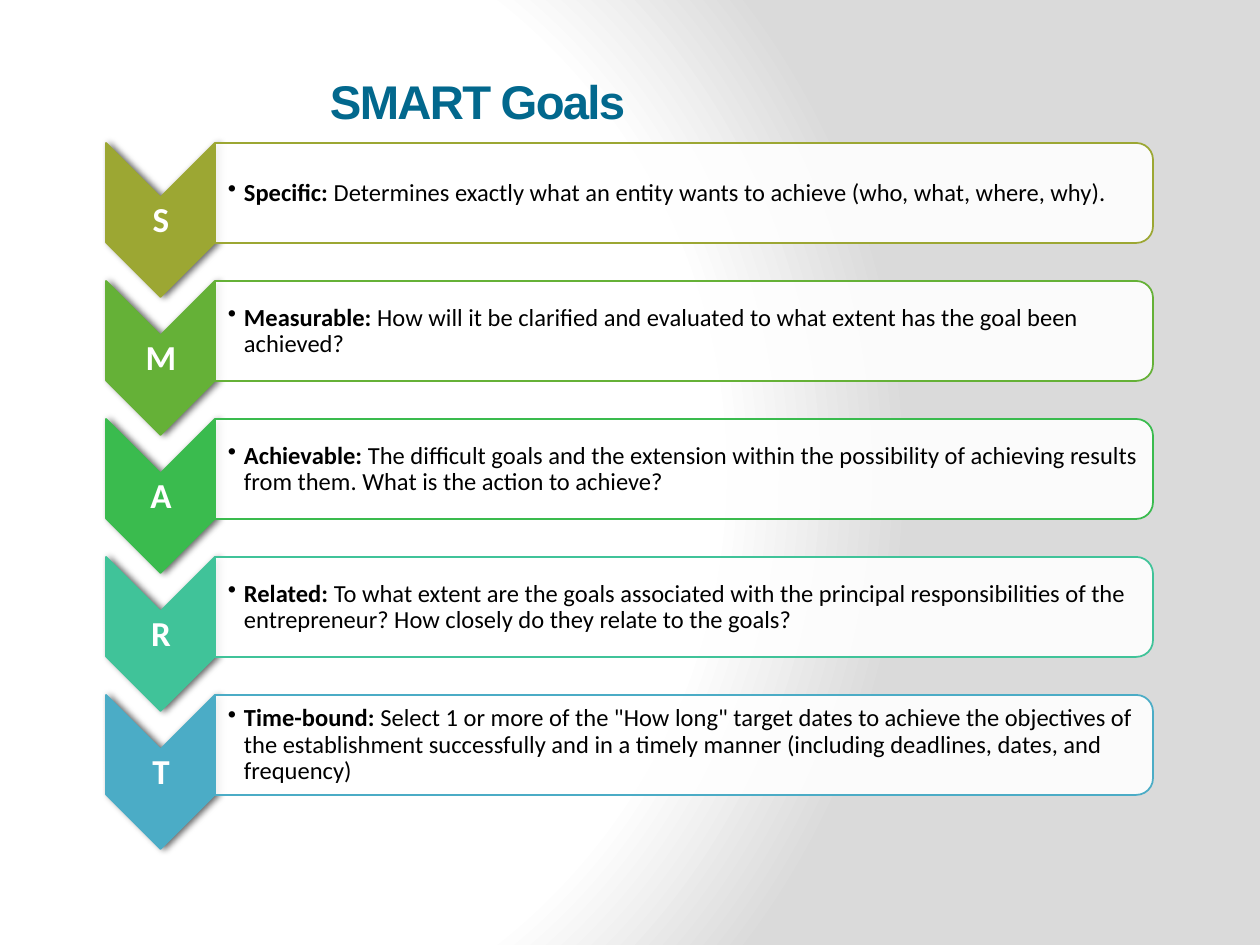
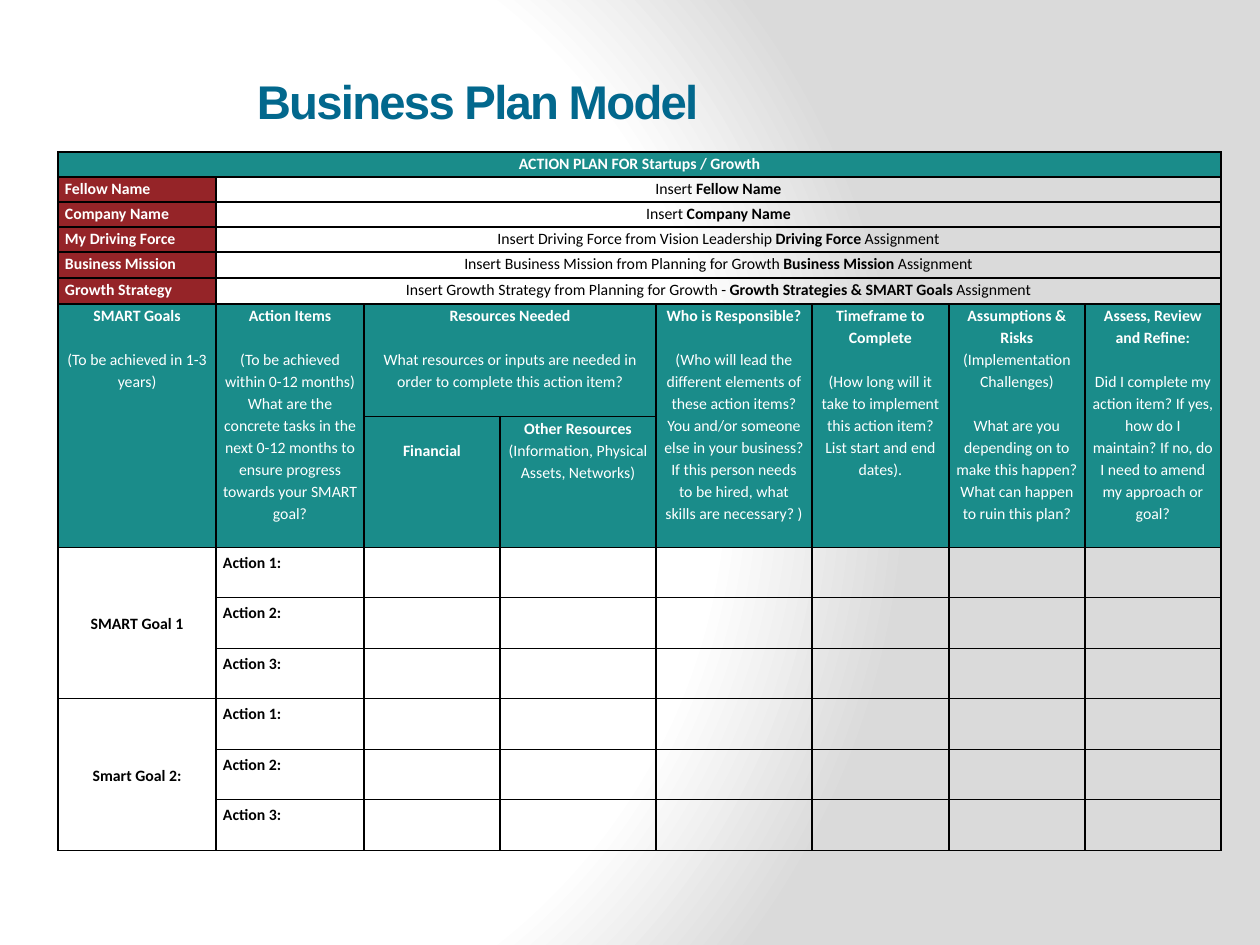
from lxml import etree
from pptx import Presentation
from pptx.dml.color import RGBColor
from pptx.enum.shapes import MSO_SHAPE
from pptx.enum.text import MSO_ANCHOR, MSO_AUTO_SIZE, PP_ALIGN
from pptx.oxml import parse_xml
from pptx.oxml.ns import nsdecls, qn
from pptx.util import Emu, Pt

PX = 914400 / 126
TITLE_ONLY = 5
CHEVRON = MSO_SHAPE.CHEVRON
ROUND_TOP = MSO_SHAPE.ROUND_2_SAME_RECTANGLE
LEFT, CENTER = PP_ALIGN.LEFT, PP_ALIGN.CENTER
TOP, MIDDLE = MSO_ANCHOR.TOP, MSO_ANCHOR.MIDDLE

COLORS = {
    "title": "02688D", "white": "FFFFFF", "black": "000000", "backdrop": "DADADA",
    "header": "1A8C8A", "label": "952428",
    "S": "9CA733", "M": "65B137", "A": "3ABB4E", "R": "40C399", "T": "4BACC6",
}

# Text between asterisks is bold.
GOALS = {
    "S": "*Specific:* Determines exactly what an entity wants to achieve (who, what, where, why).",
    "M": "*Measurable:* How will it be clarified and evaluated to what extent has the goal been achieved?",
    "A": "*Achievable:* The difficult goals and the extension within the possibility of achieving "
         "results from them. What is the action to achieve?",
    "R": "*Related:* To what extent are the goals associated with the principal responsibilities "
         "of the entrepreneur? How closely do they relate to the goals?",
    "T": "*Time-bound:* Select 1 or more of the \"How long\" target dates to achieve the objectives "
         "of the establishment successfully and in a timely manner (including deadlines, dates, "
         "and frequency)",
}

PLAN_COLUMNS = [158, 148, 136, 156, 156, 137, 136, 136]
PLAN_ROWS = [25] * 4 + [26] * 2 + [113, 131] + [50, 51] * 3
PROFILE = [
    ("Fellow Name", "Insert *Fellow Name*"),
    ("Company Name", "Insert *Company Name*"),
    ("My Driving Force", "Insert Driving Force from Vision Leadership *Driving Force* Assignment"),
    ("Business Mission",
     "Insert Business Mission from Planning for Growth *Business Mission* Assignment"),
    ("Growth Strategy",
     "Insert Growth Strategy from Planning for Growth - "
     "*Growth Strategies & SMART Goals* Assignment"),
]
# (row, column, rows spanned, columns spanned, paragraph groups set apart by a gap)
HEADINGS = [
    (6, 0, 2, 1, [["*SMART Goals*"], ["(To be achieved in 1-3 years)"]]),
    (6, 1, 2, 1, [["*Action Items*"],
                  ["(To be achieved within 0-12 months)",
                   "What are the concrete tasks in the next 0-12 months to ensure progress "
                   "towards your SMART goal?"]]),
    (6, 2, 1, 2, [["*Resources Needed*"],
                  ["What resources or inputs are needed in order to complete this action item?"]]),
    (6, 4, 2, 1, [["*Who is Responsible?*"],
                  ["(Who will lead the different elements of these action items? You and/or "
                   "someone else in your business? If this person needs to be hired, what "
                   "skills are necessary? )"]]),
    (6, 5, 2, 1, [["*Timeframe to Complete*"],
                  ["(How long will it take to implement this action item? List start and "
                   "end dates)."]]),
    (6, 6, 2, 1, [["*Assumptions & Risks*", "(Implementation Challenges)"],
                  ["What are you depending on to make this happen?",
                   "What can happen to ruin this plan?"]]),
    (6, 7, 2, 1, [["*Assess, Review and Refine:*"],
                  ["Did I complete my action item? If yes, how do I maintain? If no, do I need "
                   "to amend my approach or goal?"]]),
    (7, 3, 1, 1, [["*Other Resources*", "(Information, Physical Assets, Networks)"]]),
]


def px(*lengths):
    return [Emu(round(length * PX)) for length in lengths]


def rgb(name):
    return RGBColor.from_string(COLORS[name])


def assign(target, **values):
    for name, value in values.items():
        setattr(target, name, value)


def write_runs(paragraph, marked, size, color, font="Calibri"):
    """Add the text as runs, bold between asterisks."""
    for index, part in enumerate(marked.split("*")):
        if part:
            run = paragraph.add_run()
            run.text = part
            assign(run.font, name=font, size=Pt(size), bold=index % 2 == 1)
            run.font.color.rgb = rgb(color)


def set_backdrop(master):
    fill = master.background.fill
    fill.solid()
    background = master.element.find(".//" + qn("p:bgPr"))
    stops = "".join(
        f'<a:gs pos="{position}000"><a:srgbClr val="{COLORS[name]}"/></a:gs>'
        for position, name in ((0, "white"), (75, "white"), (100, "backdrop")))
    background.replace(background[0], parse_xml(
        f'<a:gradFill {nsdecls("a")} rotWithShape="1"><a:gsLst>{stops}</a:gsLst>'
        '<a:path path="circle"><a:fillToRect l="20000" t="50000" r="100000" b="50000"/>'
        '</a:path></a:gradFill>'))


def new_slide(prs, heading):
    slide = prs.slides.add_slide(prs.slide_layouts[TITLE_ONLY])
    title = slide.shapes.title
    left, top, width, height = px(0, 25, 955, 151)
    assign(title, left=left, top=top, width=width, height=height)
    assign(title.text_frame, vertical_anchor=MIDDLE, word_wrap=True,
           auto_size=MSO_AUTO_SIZE.NONE)
    paragraph = title.text_frame.paragraphs[0]
    paragraph.alignment = CENTER
    write_runs(paragraph, f"*{heading}*", 27, "title", "Arial")
    paragraph.runs[0].font._element.set("spc", "-100")
    return slide


def add_turned(slide, preset, x, y, width, height, fill, line):
    """Add a shape turned by 90 degrees that covers the given box."""
    shift = (width - height) / 2
    shape = slide.shapes.add_shape(preset, *px(x + shift, y - shift, height, width))
    shape.rotation = 90
    shape.shadow.inherit = False
    shape.fill.solid()
    shape.fill.fore_color.rgb = rgb(fill)
    shape.line.color.rgb = rgb(line)
    shape.line.width = Pt(1)
    return shape


def add_caption(slide, box, inset):
    frame = slide.shapes.add_textbox(*px(*box)).text_frame
    edge, = px(1)
    assign(frame, word_wrap=True, vertical_anchor=MIDDLE, margin_left=px(inset)[0],
           margin_right=edge, margin_top=edge, margin_bottom=edge)
    return frame.paragraphs[0]


def add_goal(slide, x, y, letter, meaning):
    """Draw a chevron with its letter and the bar that explains it."""
    chevron = add_turned(slide, CHEVRON, x, y, 109, 154, letter, letter)
    chevron.element.spPr.find(qn("a:effectLst")).append(parse_xml(
        f'<a:outerShdw {nsdecls("a")} blurRad="50800" dist="25400" dir="0" rotWithShape="0">'
        f'<a:srgbClr val="{COLORS["black"]}"><a:alpha val="60000"/></a:srgbClr></a:outerShdw>'))
    initial = add_caption(slide, (x + 1, y + 55, 108, 46), 1)
    assign(initial, alignment=CENTER, line_spacing=0.9)
    write_runs(initial, f"*{letter}*", 20, "white")

    bar = add_turned(slide, ROUND_TOP, x + 109, y, 938, 100, "white", letter)
    white = bar.element.spPr.find(qn("a:solidFill"))[0]
    etree.SubElement(white, qn("a:alpha")).set("val", "90000")
    explanation = add_caption(slide, (x + 108, y + 5, 934, 91), 14)
    properties = explanation._p.get_or_add_pPr()
    indent, = px(16)
    properties.set("marL", str(indent))
    properties.set("indent", str(-indent))
    etree.SubElement(properties, qn("a:buChar")).set("char", "•")
    explanation.line_spacing = 0.9
    write_runs(explanation, meaning, 14, "black")


def add_borders(cell):
    properties = cell._tc.get_or_add_tcPr()
    for side in "LRTB":
        properties.append(parse_xml(
            f'<a:ln{side} {nsdecls("a")} w="12700"><a:solidFill>'
            f'<a:srgbClr val="{COLORS["black"]}"/></a:solidFill></a:ln{side}>'))


def fill_cell(cell, groups, fill=None, align=CENTER, anchor=TOP, top=0):
    """Write groups of paragraphs, one empty line's height apart."""
    if fill:
        cell.fill.solid()
        cell.fill.fore_color.rgb = rgb(fill)
    cell.margin_top = px(top)[0]
    cell.vertical_anchor = anchor
    paragraph = None
    for group in groups:
        for index, marked in enumerate(group):
            is_first = paragraph is None
            paragraph = cell.text_frame.paragraphs[0] if is_first else cell.text_frame.add_paragraph()
            assign(paragraph, alignment=align, line_spacing=1.15)
            if index == 0 and not is_first:
                paragraph.space_before = Pt(12.6)
            write_runs(paragraph, marked, 9, "white" if fill else "black")


def add_plan(slide, x, y):
    box = px(x, y, sum(PLAN_COLUMNS), sum(PLAN_ROWS))
    plan = slide.shapes.add_table(len(PLAN_ROWS), len(PLAN_COLUMNS), *box).table
    assign(plan, first_row=False, horz_banding=False)
    for column, width in zip(plan.columns, px(*PLAN_COLUMNS)):
        column.width = width
    for row, height in zip(plan.rows, px(*PLAN_ROWS)):
        row.height = height
    side, = px(7)
    for cell in plan.iter_cells():
        add_borders(cell)
        cell.fill.background()
        assign(cell, margin_left=side, margin_right=side, margin_top=0, margin_bottom=0)

    def span(row, column, rows, columns):
        cell = plan.cell(row, column)
        if rows * columns > 1:
            cell.merge(plan.cell(row + rows - 1, column + columns - 1))
        return cell

    fill_cell(span(0, 0, 1, 8), [["*ACTION PLAN FOR Startups / Growth*"]], "header")
    for row, (label, hint) in enumerate(PROFILE, 1):
        fill_cell(plan.cell(row, 0), [[f"*{label}*"]], "label", LEFT)
        fill_cell(span(row, 1, 1, 7), [[hint]])
    for *place, groups in HEADINGS:
        fill_cell(span(*place), groups, "header")
    fill_cell(plan.cell(7, 2), [["*Financial*"]], "header", top=22)
    for first, goal in ((8, "SMART Goal 1"), (11, "Smart Goal 2:")):
        fill_cell(span(first, 0, 3, 1), [[f"*{goal}*"]], anchor=MIDDLE)
        for step in range(3):
            fill_cell(plan.cell(first + step, 1), [[f"*Action {step + 1}:*"]], align=LEFT, top=3)


def main():
    prs = Presentation()
    prs.slide_width, prs.slide_height = px(1260, 945)
    set_backdrop(prs.slide_master)
    goals_slide = new_slide(prs, "SMART Goals")
    for index, (letter, meaning) in enumerate(GOALS.items()):
        add_goal(goals_slide, 106, 143 + 138 * index, letter, meaning)
    add_plan(new_slide(prs, "Business Plan Model"), 58, 152)
    prs.save("out.pptx")


if __name__ == "__main__":
    main()
